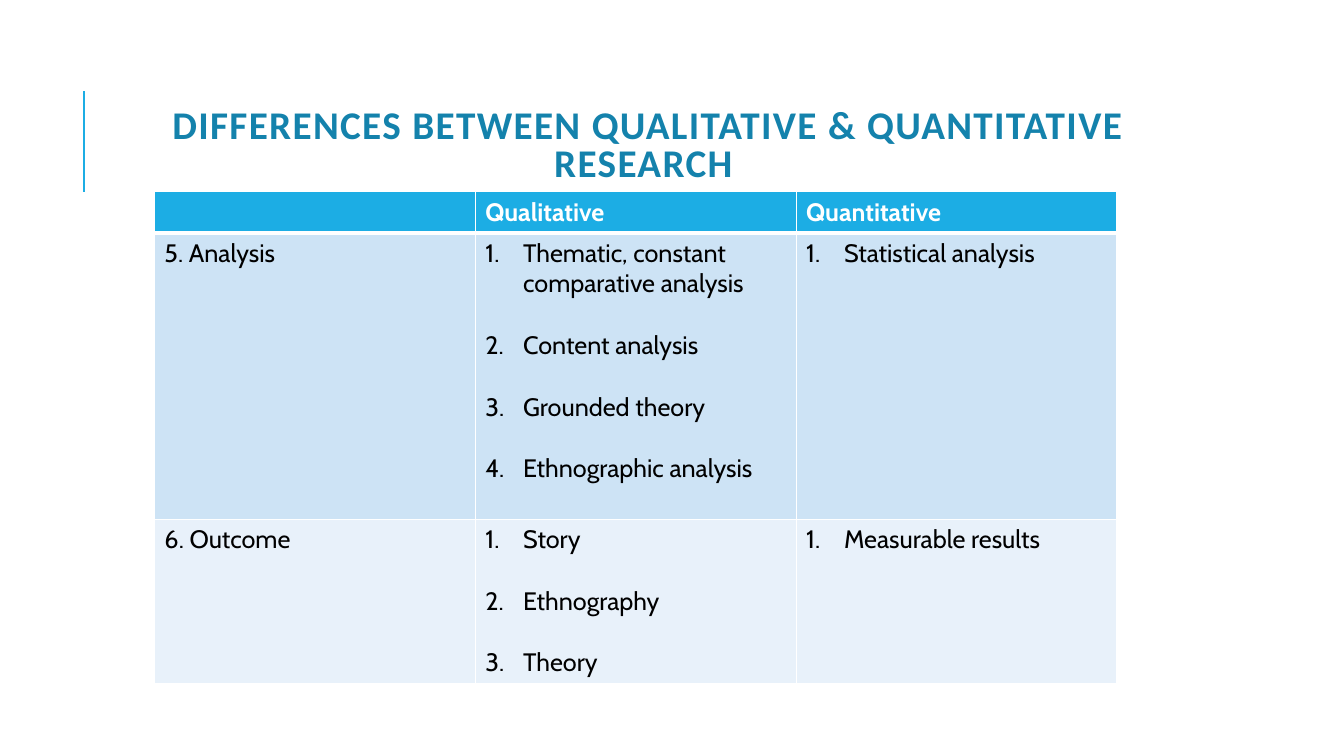
"""Build the slide comparing qualitative and quantitative research."""
from dataclasses import dataclass

from lxml.etree import SubElement
from pptx import Presentation
from pptx.dml.color import RGBColor
from pptx.enum.shapes import MSO_CONNECTOR
from pptx.enum.text import MSO_ANCHOR, MSO_AUTO_SIZE, PP_ALIGN
from pptx.oxml.ns import qn
from pptx.util import Pt

WHITE = RGBColor(0xFF, 0xFF, 0xFF)
BLACK = RGBColor(0x00, 0x00, 0x00)
ACCENT = RGBColor(0x1C, 0xAD, 0xE4)
TITLE_BLUE = RGBColor(0x14, 0x82, 0xAC)
DARK_BAND = RGBColor(0xCD, 0xE3, 0xF5)
LIGHT_BAND = RGBColor(0xE8, 0xF1, 0xFA)

TEXT_SIZE = 18
LINE_GAP = 22
LIST_INDENT = 27
COLUMN_WIDTH = 229.2
TABLE_LEFT, TABLE_TOP = 110.3, 137


@dataclass(frozen=True)
class Row:
    label: str
    qualitative: tuple[str, ...]
    quantitative: tuple[str, ...]
    height: float
    fill: RGBColor
    is_header: bool = False


ROWS = (
    Row("", ("Qualitative",), ("Quantitative",), 29.3, ACCENT, True),
    Row(
        "5. Analysis",
        (
            "Thematic, constant comparative analysis",
            "Content analysis",
            "Grounded theory",
            "Ethnographic analysis",
        ),
        ("Statistical analysis",),
        204.7,
        DARK_BAND,
    ),
    Row(
        "6. Outcome",
        ("Story", "Ethnography", "Theory"),
        ("Measurable results",),
        117.2,
        LIGHT_BAND,
    ),
)


def add_title(page, text: str) -> None:
    title = page.shapes.title
    title.left, title.top = Pt(80.6), Pt(46.1)
    title.width, title.height = Pt(765.4), Pt(118.1)
    frame = title.text_frame
    frame.word_wrap = True
    frame.auto_size = MSO_AUTO_SIZE.NONE
    frame.vertical_anchor = MSO_ANCHOR.MIDDLE
    para = frame.paragraphs[0]
    para.alignment = PP_ALIGN.CENTER
    para.line_spacing = 0.8
    para.font.name = "Calibri"
    para.font.size = Pt(28)
    para.font.bold = True
    para.font.color.rgb = TITLE_BLUE
    span = para.add_run()
    span.text = text
    span.font._element.set("spc", "100")


def add_side_rule(page) -> None:
    rule = page.shapes.add_connector(
        MSO_CONNECTOR.STRAIGHT, Pt(60), Pt(137), Pt(60), Pt(65)
    )
    rule.line.color.rgb = ACCENT
    rule.line.width = Pt(1.5)
    SubElement(rule._element.spPr, qn("a:effectLst"))


def add_borders(cell, bottom_width: float) -> None:
    properties = cell._tc.get_or_add_tcPr()
    for side in "LRTB":
        width = bottom_width if side == "B" else 1
        border = SubElement(properties, qn(f"a:ln{side}"), w=str(Pt(width)))
        fill = SubElement(border, qn("a:solidFill"))
        SubElement(fill, qn("a:srgbClr"), val=str(WHITE))


def number_paragraph(para) -> None:
    properties = para._p.get_or_add_pPr()
    properties.set("marL", str(Pt(LIST_INDENT)))
    properties.set("indent", str(Pt(-LIST_INDENT)))
    SubElement(properties, qn("a:buAutoNum"), type="arabicPeriod")


def fill_cell(cell, items: tuple[str, ...], row: Row, numbered: bool) -> None:
    add_borders(cell, 3 if row.is_header else 1)
    cell.fill.solid()
    cell.fill.fore_color.rgb = row.fill
    frame = cell.text_frame
    for index, item in enumerate(items):
        para = frame.add_paragraph() if index else frame.paragraphs[0]
        if index:
            para.space_before = Pt(LINE_GAP)
        if numbered:
            number_paragraph(para)
        para.font.name = "Cabin"
        para.font.size = Pt(TEXT_SIZE)
        para.font.bold = row.is_header
        para.font.color.rgb = WHITE if row.is_header else BLACK
        if item:
            para.add_run().text = item


def add_comparison(page, rows: tuple[Row, ...]) -> None:
    table = page.shapes.add_table(
        len(rows),
        3,
        Pt(TABLE_LEFT),
        Pt(TABLE_TOP),
        Pt(3 * COLUMN_WIDTH),
        Pt(sum(row.height for row in rows)),
    ).table
    for column in table.columns:
        column.width = Pt(COLUMN_WIDTH)
    for row_index, row in enumerate(rows):
        table.rows[row_index].height = Pt(row.height)
        contents = ((row.label,), row.qualitative, row.quantitative)
        for column_index, items in enumerate(contents):
            numbered = column_index > 0 and not row.is_header
            fill_cell(table.cell(row_index, column_index), items, row, numbered)


def main() -> None:
    deck = Presentation()
    deck.slide_width, deck.slide_height = Pt(960), Pt(540)
    page = deck.slides.add_slide(deck.slide_layouts[5])
    add_side_rule(page)
    add_title(page, "DIFFERENCES BETWEEN QUALITATIVE & QUANTITATIVE RESEARCH ")
    add_comparison(page, ROWS)
    deck.save("out.pptx")


if __name__ == "__main__":
    main()
